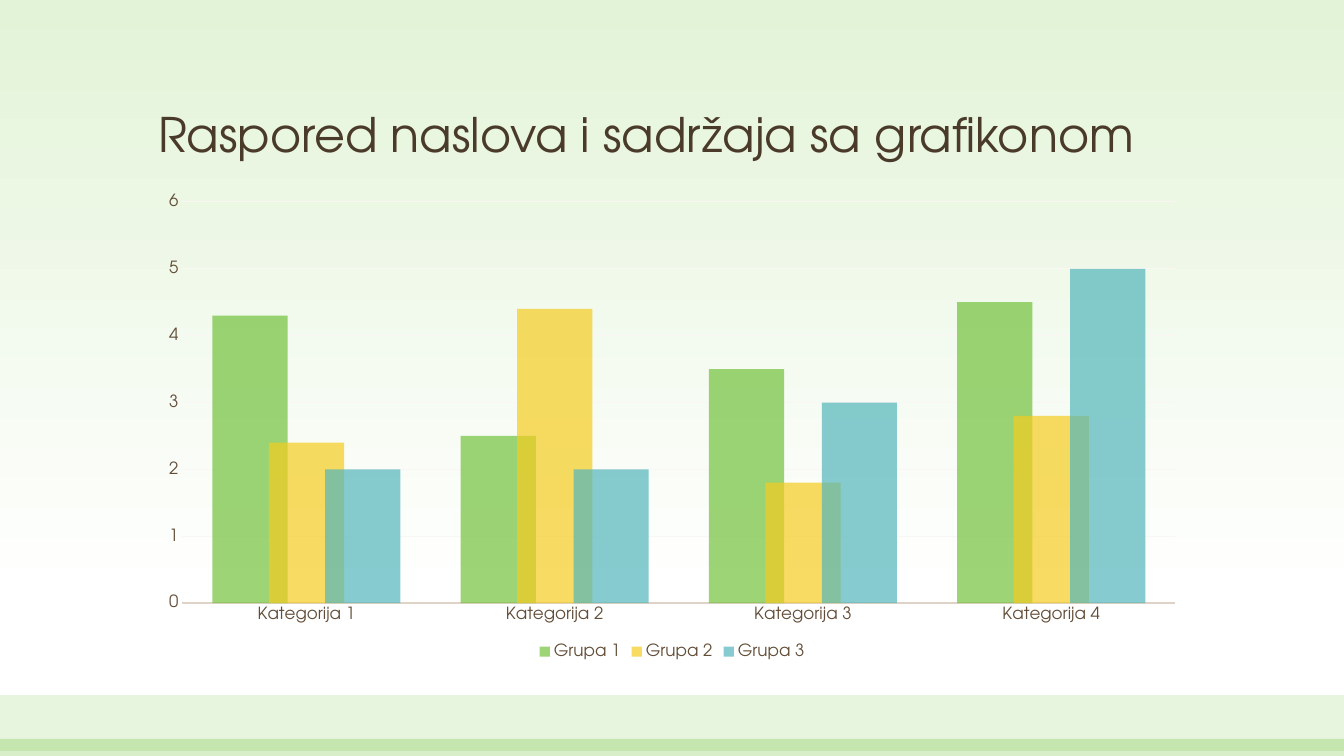
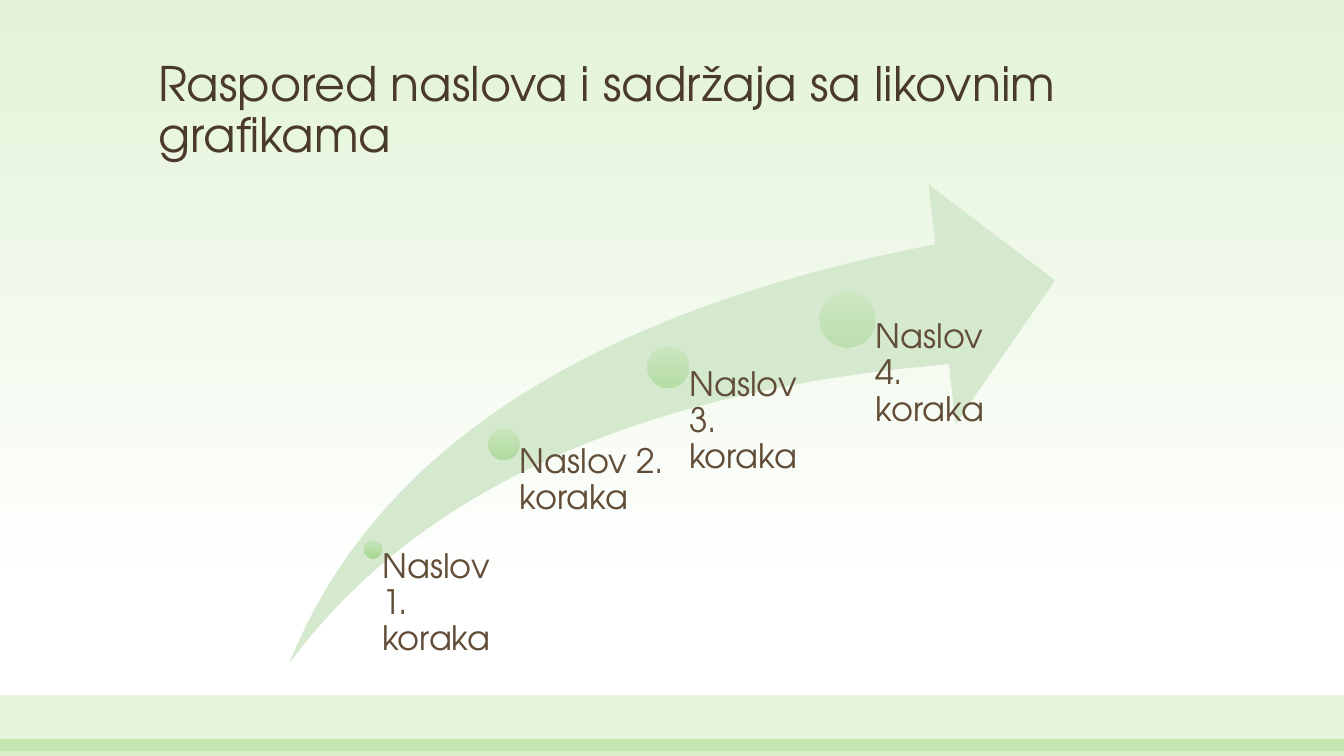
from dataclasses import dataclass

from lxml.etree import SubElement
from pptx import Presentation
from pptx.chart.data import CategoryChartData
from pptx.dml.color import RGBColor
from pptx.enum.chart import XL_CHART_TYPE as ChartType
from pptx.enum.chart import XL_LEGEND_POSITION as LegendPosition
from pptx.enum.chart import XL_TICK_MARK as TickMark
from pptx.enum.shapes import MSO_SHAPE as Preset
from pptx.enum.text import MSO_ANCHOR as Anchor
from pptx.enum.text import MSO_AUTO_SIZE as AutoSize
from pptx.enum.text import PP_ALIGN as Align
from pptx.oxml.ns import qn
from pptx.util import Cm, Pt


@dataclass(frozen=True)
class Theme:
    font: str = "TeX Gyre Adventor"
    title: RGBColor = RGBColor.from_string("4A3A2A")
    text: RGBColor = RGBColor.from_string("624D38")
    green: RGBColor = RGBColor.from_string("72C23C")
    yellow: RGBColor = RGBColor.from_string("F4CC20")
    teal: RGBColor = RGBColor.from_string("53B6BB")
    sky: RGBColor = RGBColor.from_string("E3F3D8")
    white: RGBColor = RGBColor.from_string("FFFFFF")
    axis: RGBColor = RGBColor.from_string("DFD2C6")
    grid: RGBColor = RGBColor.from_string("F9F6F4")
    arrow: RGBColor = RGBColor.from_string("D5E9CE")
    dot_top: RGBColor = RGBColor.from_string("C8E5BC")
    dot_bottom: RGBColor = RGBColor.from_string("A4D78D")
    title_size: Pt = Pt(34)
    step_size: Pt = Pt(24)
    chart_size: Pt = Pt(12)


theme = Theme()


def write(frame, text, *, size, color, anchor=Anchor.TOP):
    frame.word_wrap = True
    frame.auto_size = AutoSize.NONE
    frame.vertical_anchor = anchor
    para = frame.paragraphs[0]
    para.alignment = Align.LEFT
    para.line_spacing = 0.9
    span = para.add_run()
    span.text = text
    span.font.name = theme.font
    span.font.size = size
    span.font.color.rgb = color


def set_opacity(element, percent):
    for color in element.iter(qn("a:srgbClr")):
        SubElement(color, qn("a:alpha")).set("val", str(percent * 1000))


deck = Presentation()
deck.slide_width, deck.slide_height = Cm(33.87), Cm(19.05)
master = deck.slide_master
layout = deck.slide_layouts.get_by_name("Title Only")

backdrop = master.background.fill
backdrop.gradient()
backdrop.gradient_angle = 270
for stop, position, color in zip(backdrop.gradient_stops, (0, 0.79), (theme.sky, theme.white)):
    stop.position = position
    stop.color.rgb = color

title = layout.placeholders[0]
title.left, title.top, title.width, title.height = Cm(3.73), Cm(1.22), Cm(26.42), Cm(3.02)

chart_page, steps_page = pages = [deck.slides.add_slide(layout) for _ in range(2)]
headings = (
    "Raspored naslova i sadržaja sa grafikonom",
    "Raspored naslova i sadržaja sa likovnim grafikama",
)
for page, heading in zip(pages, headings):
    write(page.shapes.title.text_frame, heading, size=theme.title_size,
          color=theme.title, anchor=Anchor.BOTTOM)

for index, (top, height, opacity) in enumerate(((17.52, 1.4, 17), (18.62, 0.43, 28))):
    band = chart_page.shapes.add_shape(
        Preset.RECTANGLE, 0, Cm(top), deck.slide_width, Cm(height))
    band.shadow.inherit = False
    band.fill.solid()
    band.fill.fore_color.rgb = theme.green
    band.line.fill.background()
    set_opacity(band._element, opacity)
    master.shapes._spTree.insert(2 + index, band._element)

data = CategoryChartData(number_format="General")
data.categories = [f"Kategorija {number}" for number in range(1, 5)]
data.add_series("Grupa 1", (4.3, 2.5, 3.5, 4.5))
data.add_series("Grupa 2", (2.4, 4.4, 1.8, 2.8))
data.add_series("Grupa 3", (2, 2, 3, 5))
chart = chart_page.shapes.add_chart(
    ChartType.COLUMN_CLUSTERED, Cm(3.73), Cm(4.65), Cm(26.42), Cm(12.07), data).chart
chart.has_title = False
chart.font.name = theme.font
chart.font.size = theme.chart_size
chart.font.color.rgb = theme.text
chart.has_legend = True
chart.legend.position = LegendPosition.BOTTOM
chart.legend.include_in_layout = False

plot = chart.plots[0]
plot.vary_by_categories = False
plot.gap_width = 80
plot.overlap = 25
for series, color in zip(plot.series, (theme.green, theme.yellow, theme.teal)):
    series.format.fill.solid()
    series.format.fill.fore_color.rgb = color
    set_opacity(series._element, 70)

for axis in (chart.category_axis, chart.value_axis):
    axis.major_tick_mark = axis.minor_tick_mark = TickMark.NONE
chart.category_axis.format.line.color.rgb = theme.axis
chart.category_axis.format.line.width = Pt(1.25)
values = chart.value_axis
values.minimum_scale, values.maximum_scale, values.major_unit = 0, 6, 1
values.format.line.fill.background()
values.major_gridlines.format.line.color.rgb = theme.grid
values.major_gridlines.format.line.width = Pt(0.75)

arrow = steps_page.shapes.add_shape(
    Preset.SWOOSH_ARROW, Cm(7.29), Cm(4.65), Cm(19.3), Cm(12.07))
arrow.adjustments[0] = arrow.adjustments[1] = 0.25
arrow.shadow.inherit = False
arrow.fill.solid()
arrow.fill.fore_color.rgb = theme.arrow
arrow.line.fill.background()

arrow_bottom = arrow.top + arrow.height
steps = (
    (9.4, 13.84, 0.46, 3.3, 90),
    (12.7, 11.2, 0.78, 4.06, 77),
    (16.84, 9.25, 1.05, 4.06, 63),
    (21.36, 8.05, 1.4, 4.06, 50),
)
for number, (x, y, diameter, width, opacity) in enumerate(steps, 1):
    radius = diameter / 2
    dot = steps_page.shapes.add_shape(
        Preset.OVAL, Cm(x - radius), Cm(y - radius), Cm(diameter), Cm(diameter))
    dot.shadow.inherit = False
    dot.line.fill.background()
    dot.fill.gradient()
    dot.fill.gradient_angle = 270
    for stop, color in zip(dot.fill.gradient_stops, (theme.dot_top, theme.dot_bottom)):
        stop.color.rgb = color
    set_opacity(dot._element, opacity)

    box = steps_page.shapes.add_textbox(Cm(x), Cm(y), Cm(width), arrow_bottom - Cm(y))
    frame = box.text_frame
    frame.margin_left = Cm(radius)
    frame.margin_top = frame.margin_right = frame.margin_bottom = 0
    write(frame, f"Naslov {number}. koraka", size=theme.step_size, color=theme.text)

deck.save("out.pptx")
